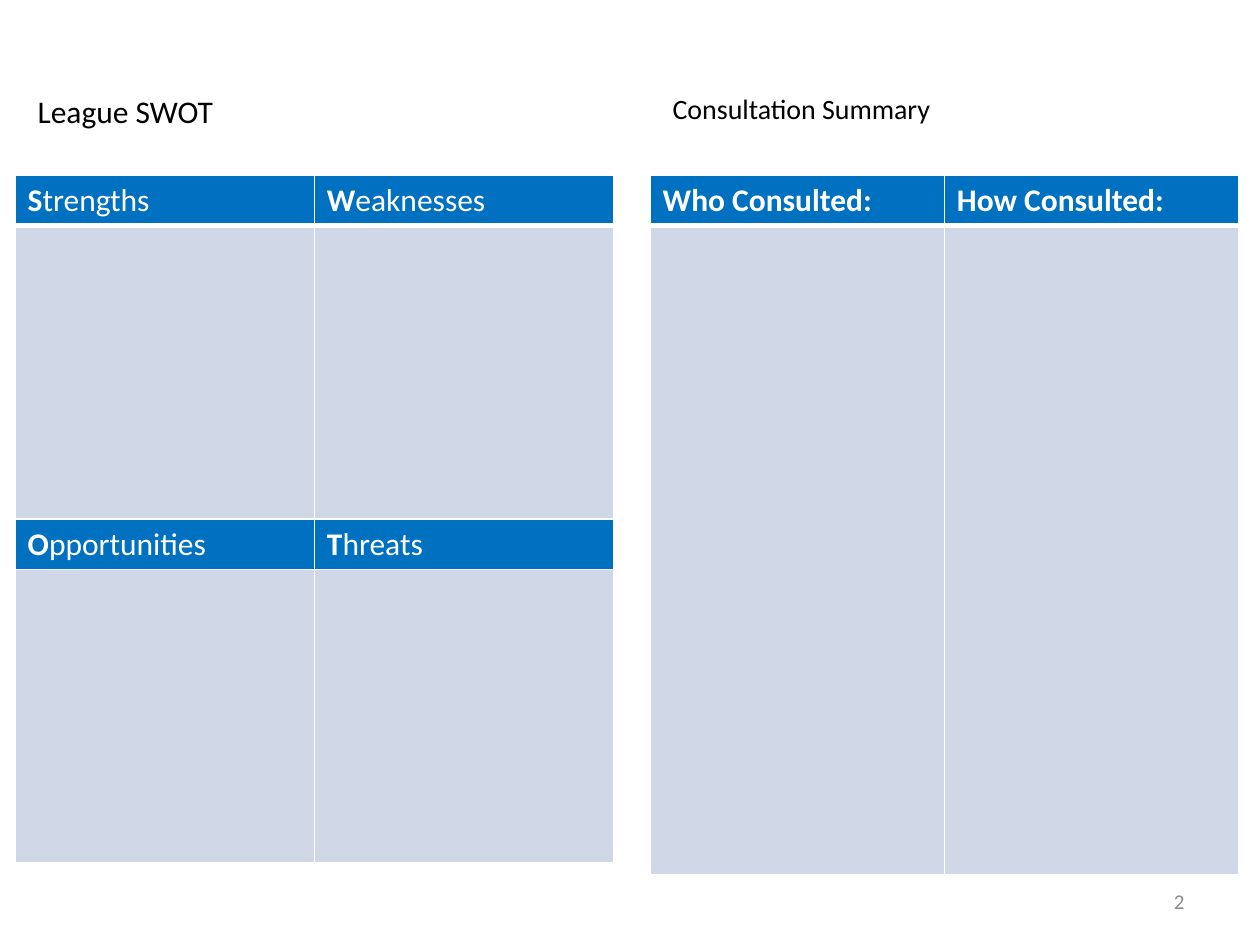
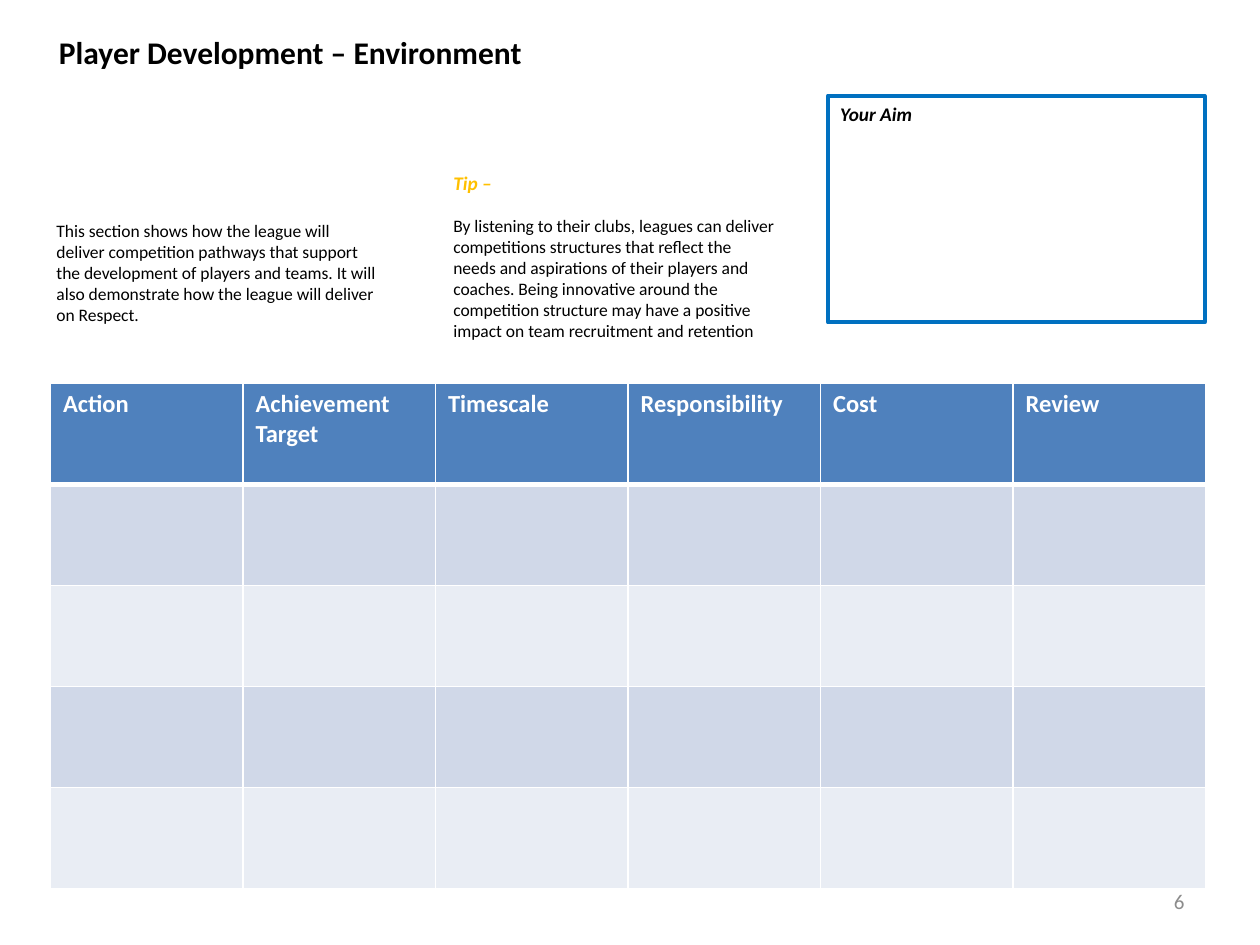
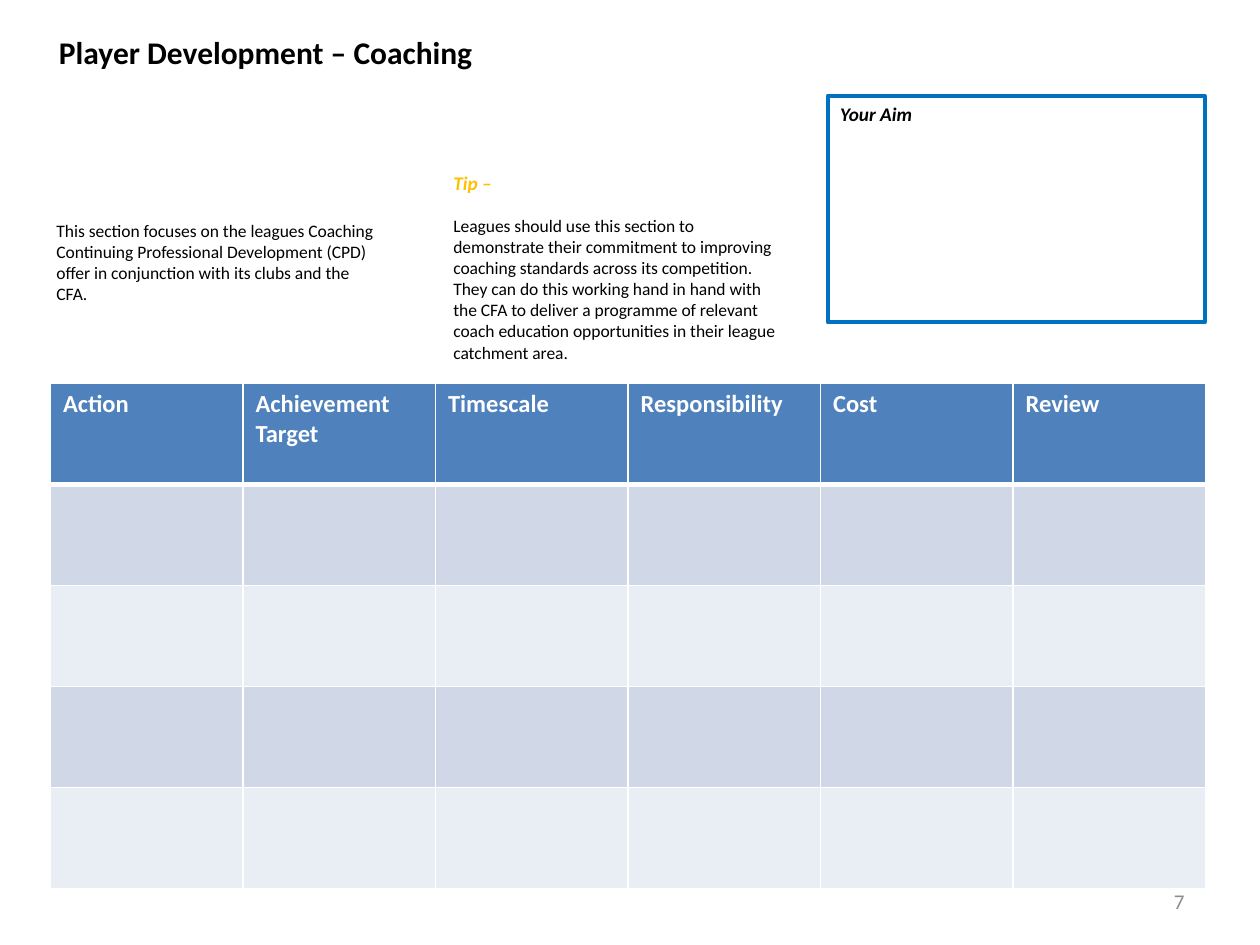
from lxml import etree
from pptx import Presentation
from pptx import util as u
from pptx.dml.color import RGBColor
from pptx.enum import shapes, text
from pptx.oxml import ns

WHITE = RGBColor(0xFF, 0xFF, 0xFF)
BLACK = RGBColor(0x00, 0x00, 0x00)
GREY = RGBColor(0x8C, 0x8C, 0x8C)
BLUE = RGBColor(0x00, 0x70, 0xC0)
STEEL = RGBColor(0x4F, 0x81, 0xBD)
PALE = RGBColor(0xD0, 0xD8, 0xE8)
PALER = RGBColor(0xE9, 0xED, 0xF4)
AMBER = RGBColor(0xFF, 0xC0, 0x00)

FONT = "Calibri"
COLUMNS, ROWS = 100, 75
ACTION_HEADINGS = ("Action", "Achievement Target", "Timescale", "Responsibility", "Cost", "Review")
ACTION_ROWS = 4

PLANS = (
    (6, "Environment", 39.6,
     "This section shows how the league will deliver competition pathways that support the "
     "development of players and teams. It will also demonstrate how the league will deliver "
     "on Respect.",
     "By listening to their clubs, leagues can deliver competitions structures that reflect the "
     "needs and aspirations of their players and coaches. Being innovative around the competition "
     "structure may have a positive impact on team recruitment and retention"),
    (7, "Coaching", 35.7,
     "This section focuses on the leagues Coaching Continuing Professional Development (CPD) "
     "offer in conjunction with its clubs and the CFA.",
     "Leagues should use this section to demonstrate their commitment to improving coaching "
     "standards across its competition. They can do this working hand in hand with the CFA to "
     "deliver a programme of relevant coach education opportunities in their league catchment area."),
)


class Deck:
    def __init__(self):
        self.presentation = Presentation()
        self.presentation.slide_width = u.Inches(10)
        self.presentation.slide_height = u.Inches(7.5)
        self.column = self.presentation.slide_width / COLUMNS
        self.row = self.presentation.slide_height / ROWS
        self.slide = None

    def place(self, left, top, width, height):
        return (round(left * self.column), round(top * self.row),
                round(width * self.column), round(height * self.row))

    def new_slide(self, number):
        self.slide = self.presentation.slides.add_slide(self.presentation.slide_layouts[6])
        frame = self.text_box((71.7, 69.5, 23.3, 4), grow=False)
        frame.vertical_anchor = text.MSO_ANCHOR.MIDDLE
        paragraph = frame.paragraphs[0]
        paragraph.alignment = text.PP_ALIGN.RIGHT
        self.run(paragraph, str(number), 12, GREY)

    def run(self, paragraph, words, size, color=BLACK, bold=False, italic=False):
        run = paragraph.add_run()
        run.text = words
        font = run.font
        font.name, font.size, font.bold, font.italic = FONT, u.Pt(size), bold, italic
        font.color.rgb = color

    def text_box(self, area, wrap=True, grow=True):
        frame = self.slide.shapes.add_textbox(*self.place(*area)).text_frame
        frame.word_wrap = wrap
        if grow:
            frame.auto_size = text.MSO_AUTO_SIZE.SHAPE_TO_FIT_TEXT
        return frame

    def title(self, area, words, size=18, bold=False):
        frame = self.text_box(area, wrap=False)
        self.run(frame.paragraphs[0], words, size, bold=bold)

    def outlined_box(self, area, label):
        shape = self.slide.shapes.add_shape(shapes.MSO_SHAPE.RECTANGLE, *self.place(*area))
        shape.shadow.inherit = False
        shape.fill.background()
        shape.line.color.rgb = BLUE
        shape.line.width = u.Pt(2.25)
        frame = shape.text_frame
        frame.word_wrap = True
        frame.vertical_anchor = text.MSO_ANCHOR.TOP
        paragraph = frame.paragraphs[0]
        paragraph.alignment = text.PP_ALIGN.LEFT
        self.run(paragraph, label, 11, bold=True, italic=True)

    def cell_borders(self, cell, top, bottom):
        properties = cell._tc.get_or_add_tcPr()
        for side, points in (("L", 1), ("R", 1), ("T", top), ("B", bottom)):
            line = etree.SubElement(properties, ns.qn(f"a:ln{side}"), w=str(u.Pt(points)))
            fill = etree.SubElement(line, ns.qn("a:solidFill"))
            etree.SubElement(fill, ns.qn("a:srgbClr"), val=str(WHITE))

    def table(self, left, top, width, heights, rows, fills, size):
        count = len(rows[0])
        area = self.place(left, top, width, sum(heights))
        table = self.slide.shapes.add_table(len(rows), count, *area).table
        table.horz_banding = False
        for column in table.columns:
            column.width = round(width * self.column / count)
        for index, (height, runs_by_cell, color) in enumerate(zip(heights, rows, fills)):
            table.rows[index].height = round(height * self.row)
            for cell, runs in zip(table.rows[index].cells, runs_by_cell):
                self.cell_borders(cell, 3 if index == 1 else 1, 3 if index == 0 else 1)
                cell.fill.solid()
                cell.fill.fore_color.rgb = color
                for words, bold in runs:
                    self.run(cell.text_frame.paragraphs[0], words, size, WHITE, bold)


def bold_headings(*labels):
    return [[(label, True)] for label in labels]


def initial_headings(*labels):
    return [[(label[0], True), (label[1:], False)] for label in labels]


def empty_row(count):
    return [[] for _ in range(count)]


def analysis_slide(deck):
    deck.new_slide(2)
    swot = [initial_headings("Strengths", "Weaknesses"), empty_row(2),
            initial_headings("Opportunities", "Threats"), empty_row(2)]
    deck.table(1.2, 13.9, 47.5, [4, 23.3] * 2, swot, [BLUE, PALE] * 2, 18)
    consultation = [bold_headings("Who Consulted:", "How Consulted:"), empty_row(2)]
    deck.table(51.6, 13.9, 46.7, [4, 51.5], consultation, [BLUE, PALE], 18)
    deck.title((2, 6.8, 16.1, 4), "League SWOT")
    deck.title((52.4, 6.8, 22.7, 3.7), "Consultation Summary", 16)


def plan_slide(deck, number, topic, title_width, purpose, tip):
    deck.new_slide(number)
    deck.outlined_box((65.7, 7.6, 29.9, 18), "Your Aim")
    deck.run(deck.text_box((3.5, 17, 27.6, 9.4)).paragraphs[0], purpose, 10)
    frame = deck.text_box((35, 13.1, 27.6, 14.6))
    deck.run(frame.paragraphs[0], "Tip –", 11, AMBER, bold=True, italic=True)
    paragraph = frame.add_paragraph()
    paragraph.space_before = u.Pt(12)
    deck.run(paragraph, tip, 10)
    deck.title((3.7, 2.1, title_width, 4), f"Player Development – {topic}", bold=True)
    count = len(ACTION_HEADINGS)
    rows = [bold_headings(*ACTION_HEADINGS)] + [empty_row(count) for _ in range(ACTION_ROWS)]
    fills = [STEEL] + [PALE, PALER] * (ACTION_ROWS // 2)
    deck.table(4, 30.4, 91.7, [8.03] * len(rows), rows, fills, 14)


def main():
    deck = Deck()
    analysis_slide(deck)
    for plan in PLANS:
        plan_slide(deck, *plan)
    deck.presentation.save("out.pptx")


if __name__ == "__main__":
    main()
